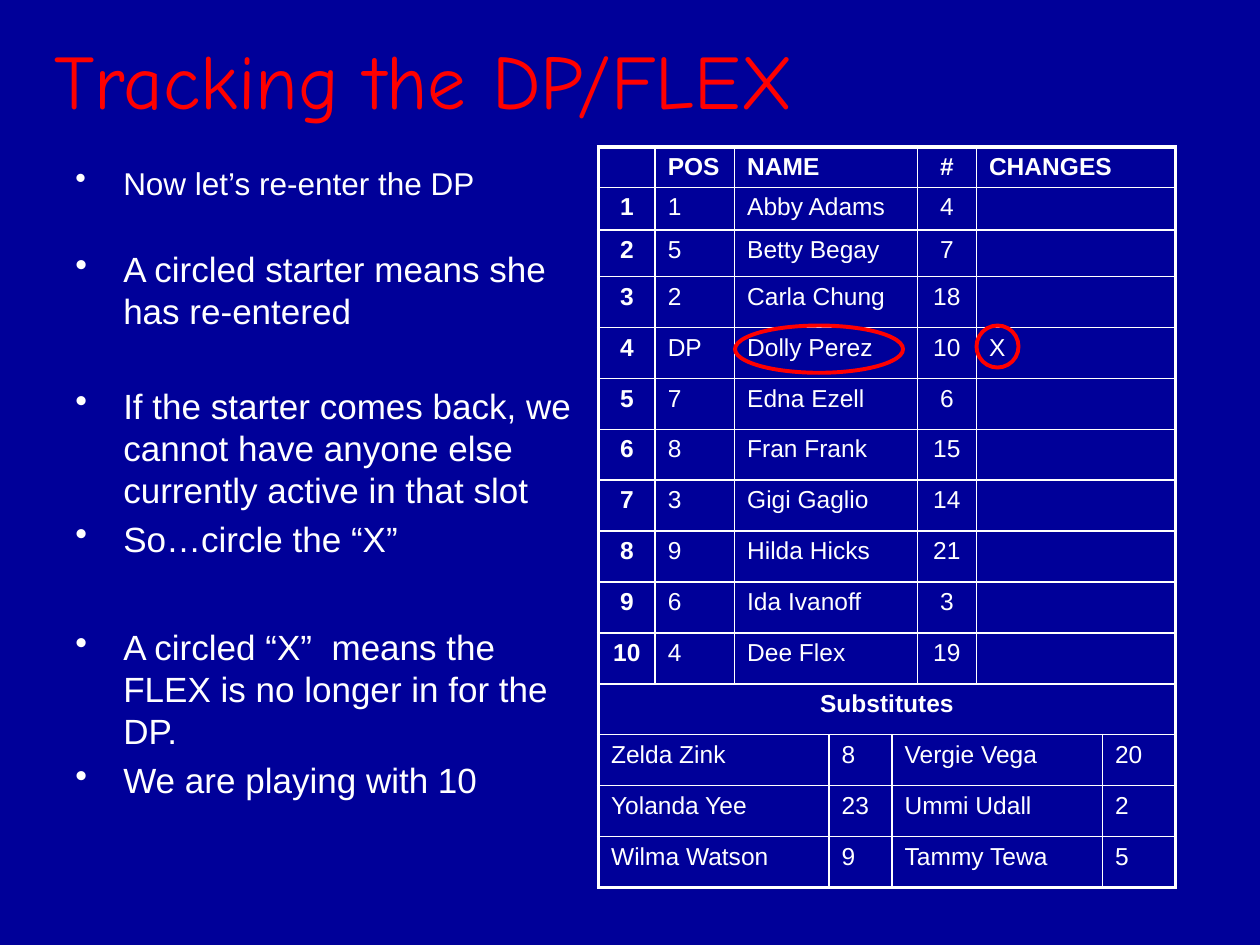
"""Build the softball line-up slide that shows how to track the DP/FLEX."""
from lxml import etree
from pptx import Presentation, util as u
from pptx.dml.color import RGBColor as Rgb
from pptx.enum import shapes, text
from pptx.oxml.ns import qn

THEME = dict(
    back=Rgb.from_string("000099"), ink=Rgb.from_string("FFFFFF"), mark=Rgb.from_string("FF0000"),
    head="Comic Neue", body="Arial", title=44, lead=18, point=20, cell=14, thin=1, thick=2.25,
)
UNIT = u.Inches(1 / 12)
PLAIN = "{2D5ABB26-0587-4C30-8999-92F81FD0307C}"


def grid(*spans):
    return [round(n * UNIT) for n in spans]


def style(para, size, color=THEME["ink"], face=THEME["body"], bold=False):
    font = para.font
    font.size, font.name, font.bold = u.Pt(size), face, bold
    font.color.rgb = color


deck = Presentation()
deck.slide_width, deck.slide_height = grid(120, 90)
slide = deck.slides.add_slide(deck.slide_layouts[5])
slide.background.fill.solid()
slide.background.fill.fore_color.rgb = THEME["back"]

title = slide.shapes.title
title.left, title.top, title.width, title.height = grid(4, 3, 102, 9)
frame = title.text_frame
frame.text = "Tracking the DP/FLEX"
frame.vertical_anchor = text.MSO_ANCHOR.MIDDLE
frame.auto_size = text.MSO_AUTO_SIZE.NONE
frame.paragraphs[0].alignment = text.PP_ALIGN.LEFT
style(frame.paragraphs[0], THEME["title"], THEME["mark"], THEME["head"])

names = ["Abby Adams", "Betty Begay", "Carla Chung", "Dolly Perez", "Edna Ezell",
         "Fran Frank", "Gigi Gaglio", "Hilda Hicks", "Ida Ivanoff", "Dee Flex"]
spots = ["1", "5", "2", "DP", "7", "8", "3", "9", "6", "4"]
shirts = [4, 7, 18, 10, 6, 15, 14, 21, 3, 19]
subs = [("Zelda Zink", 8, "Vergie Vega", 20),
        ("Yolanda Yee", 23, "Ummi Udall", 2),
        ("Wilma Watson", 9, "Tammy Tewa", 5)]

rows = [{1: "POS", 2: "NAME", 5: "#", 6: "CHANGES"}]
for n, (spot, name, shirt) in enumerate(zip(spots, names, shirts), 1):
    rows.append({0: n, 1: spot, 2: name, 5: shirt, 6: "X" if spot == "DP" else ""})
rows.append({0: "Substitutes"})
rows += [dict(zip((0, 3, 4, 7), sub)) for sub in subs]

widths = [0.45, 0.63, 0.75, 0.5, 0.2, 0.47, 1, 0.58]
heights = [0.32, 0.34, 0.37] + [4.85 / 12] * 12
last = len(rows) - 1
band = last - len(subs)
ends = len(widths)

holder = slide.shapes.add_table(len(rows), ends, *grid(57, 14, 55, 70.5))
table = holder.table
table.first_row = table.horz_banding = False
table._tbl.tblPr.find(qn("a:tableStyleId")).text = PLAIN
for col, width in zip(table.columns, widths):
    col.width = u.Inches(width)

for r, (row, height) in enumerate(zip(rows, heights)):
    table.rows[r].height = u.Inches(height)
    if r < band:
        merges = [(2, 4), (6, 7)]
    elif r == band:
        merges = [(0, 7)]
    else:
        merges = [(0, 2), (4, 6)]
    for start, stop in merges:
        table.cell(r, start).merge(table.cell(r, stop))
    for c in range(ends):
        cell = table.cell(r, c)
        para = cell.text_frame.paragraphs[0]
        para.text = str(row.get(c, ""))
        para.space_before = u.Pt(0.2 * THEME["cell"])
        style(para, THEME["cell"], bold=r in (0, band) or (r < band and c == 0))
        if r == band or (r < band and c in (0, 5)):
            para.alignment = text.PP_ALIGN.CENTER
        if r == 0:
            cell.vertical_anchor = text.MSO_ANCHOR.MIDDLE
        if not cell.is_spanned:
            span = cell.span_width if cell.is_merge_origin else 1
            outer = dict(L=c == 0, R=c + span == ends, T=r == 0, B=r == last)
            for side, edge in outer.items():
                width = u.Pt(THEME["thick"] if edge else THEME["thin"])
                line = etree.SubElement(cell._tc.get_or_add_tcPr(), qn("a:ln" + side), w=str(width))
                fill = etree.SubElement(line, qn("a:solidFill"))
                etree.SubElement(fill, qn("a:srgbClr"), val=str(THEME["ink"]))
        cell.fill.background()

notes = [
    (15, 7, THEME["lead"], ["Now let’s re-enter the DP"]),
    (23, 10, THEME["point"], ["A circled starter means she has re-entered"]),
    (36, 19, THEME["point"], [
        "If the starter comes back, we cannot have anyone else currently active in that slot",
        "So…circle the “X”"]),
    (59, 19, THEME["point"], [
        "A circled “X”  means the FLEX is no longer in for the DP.",
        "We are playing with 10"]),
]
for top, tall, size, lines in notes:
    frame = slide.shapes.add_textbox(*grid(6, top, 50, tall)).text_frame
    frame.word_wrap = True
    frame.text = "\n".join(lines)
    for para in frame.paragraphs:
        para.space_before = u.Pt(0.2 * size)
        style(para, size)
        props = para._p.get_or_add_pPr()
        props.set("marL", str(u.Inches(0.38)))
        props.set("indent", str(-u.Inches(0.38)))
        dot = etree.Element(qn("a:buChar"), char="•")
        props.find(qn("a:defRPr")).addprevious(dot)

for spot in [(93, 31, 4, 4), (70, 31, 16, 4.5)]:
    ring = slide.shapes.add_shape(shapes.MSO_SHAPE.OVAL, *grid(*spot))
    ring.shadow.inherit = False
    ring.fill.background()
    ring.line.color.rgb = THEME["mark"]
    ring.line.width = u.Pt(THEME["thick"])

deck.save("out.pptx")
